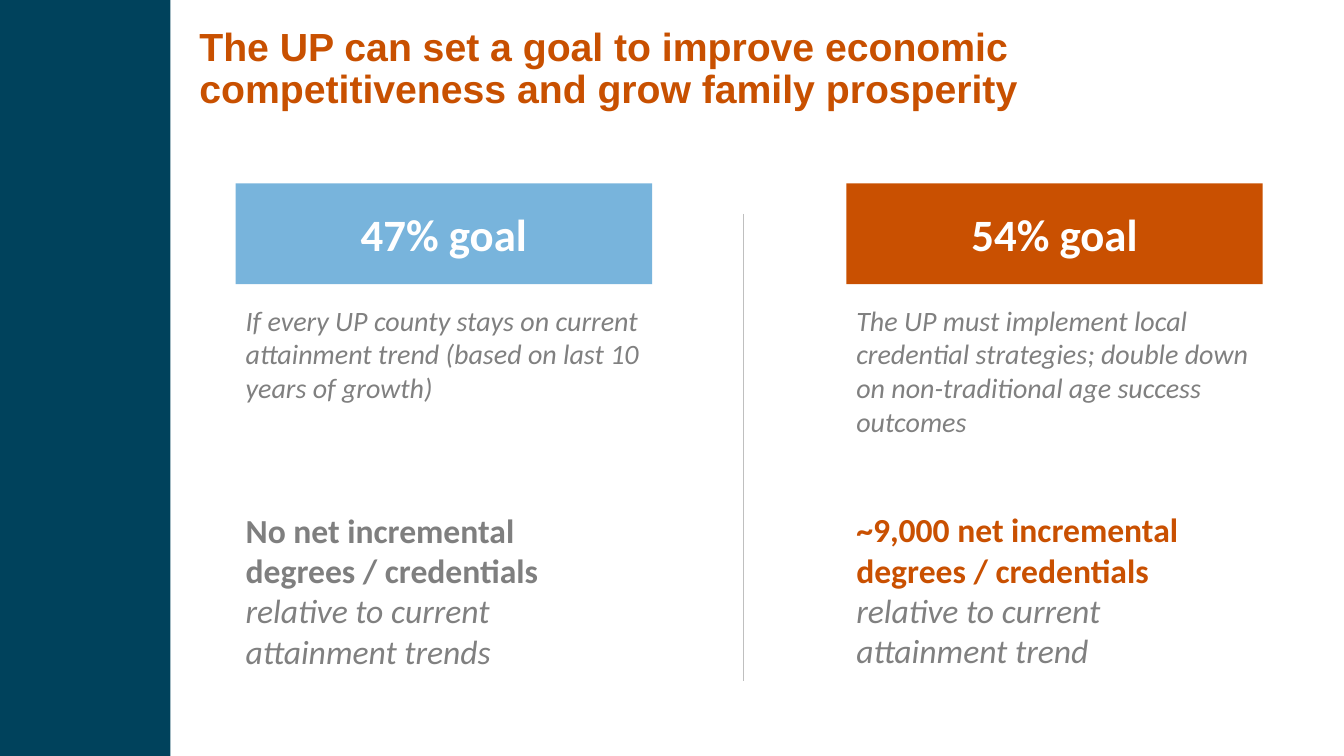
from dataclasses import dataclass

from lxml.etree import SubElement
from pptx import Presentation
from pptx.dml.color import RGBColor
from pptx.enum.shapes import MSO_CONNECTOR as Connector
from pptx.enum.shapes import MSO_SHAPE as Shape
from pptx.enum.text import MSO_ANCHOR as Anchor
from pptx.enum.text import PP_ALIGN as Align
from pptx.oxml.ns import qn
from pptx.slide import Slide
from pptx.util import Pt


@dataclass(frozen=True)
class Theme:
    navy: str = "00425C"
    orange: str = "C85000"
    header_orange: str = "C95001"
    blue: str = "78B4DC"
    grey: str = "808080"
    rule: str = "BFBFBF"
    white: str = "FFFFFF"
    title_font: str = "Arial"
    body_font: str = "Calibri"
    title_size: float = 28
    goal_size: float = 32
    result_size: float = 24
    note_size: float = 20


@dataclass(frozen=True)
class GoalColumn:
    left: float
    goal: str
    fill: str
    note: str
    note_lines: int
    result: str
    result_color: str
    comparison: str


THEME = Theme()
SLIDE_WIDTH, SLIDE_HEIGHT = 960, 540
COLUMN_WIDTH = 297.4
HEADER_TOP, HEADER_HEIGHT = 131, 72
BODY_TOP, BODY_HEIGHT = 213.1, 303.1
NOTE_ROWS, NOTE_LINE, RESULT_GAP = 4, 24.4, 39

COLUMNS = (
    GoalColumn(168.4, "47% goal", THEME.blue,
               "If every UP county stays on current attainment trend "
               "(based on last 10 years of growth)", 3,
               "No net incremental degrees / credentials", "7F7F7F",
               "relative to current attainment trends"),
    GoalColumn(604.6, "54% goal", THEME.header_orange,
               "The UP must implement local credential strategies; double down "
               "on non-traditional age success outcomes", 4,
               "~9,000 net incremental degrees / credentials", THEME.header_orange,
               "relative to current attainment trend"),
)


def add_span(para, text: str, size: float, color: str, font: str = THEME.body_font,
             bold: bool = False, italic: bool = False) -> None:
    span = para.add_run()
    span.text = text
    span.font.name = font
    span.font.size = Pt(size)
    span.font.bold = bold
    span.font.italic = italic
    span.font.color.rgb = RGBColor.from_string(color)


def add_block(page: Slide, left: float, top: float, width: float, height: float, fill: str):
    block = page.shapes.add_shape(Shape.RECTANGLE, Pt(left), Pt(top), Pt(width), Pt(height))
    block.shadow.inherit = False
    block.fill.solid()
    block.fill.fore_color.rgb = RGBColor.from_string(fill)
    block.line.fill.background()
    return block


def add_text_frame(page: Slide, left: float, top: float, width: float, height: float):
    box = page.shapes.add_textbox(Pt(left), Pt(top), Pt(width), Pt(height))
    box.text_frame.word_wrap = True
    return box.text_frame


def add_divider(page: Slide, x: float, top: float, bottom: float) -> None:
    divider = page.shapes.add_connector(Connector.STRAIGHT, Pt(x), Pt(top), Pt(x), Pt(bottom))
    divider.line.color.rgb = RGBColor.from_string(THEME.rule)
    divider.line.width = Pt(0.75)
    SubElement(divider._element.spPr, qn("a:effectLst"))


def add_title(page: Slide, text: str) -> None:
    frame = add_text_frame(page, 135.4, -2.2, 722.2, 104.4)
    frame.vertical_anchor = Anchor.MIDDLE
    para = frame.paragraphs[0]
    para.line_spacing = 0.9
    add_span(para, text, THEME.title_size, THEME.orange, THEME.title_font, bold=True)


def add_column(page: Slide, column: GoalColumn) -> None:
    # Goal header
    header = add_block(page, column.left, HEADER_TOP, COLUMN_WIDTH, HEADER_HEIGHT, column.fill)
    header.text_frame.word_wrap = True
    header.text_frame.vertical_anchor = Anchor.MIDDLE
    para = header.text_frame.paragraphs[0]
    para.alignment = Align.CENTER
    add_span(para, column.goal, THEME.goal_size, THEME.white, bold=True)

    # Condition for reaching the goal
    frame = add_text_frame(page, column.left, BODY_TOP, COLUMN_WIDTH, BODY_HEIGHT)
    para = frame.paragraphs[0]
    para.space_after = Pt(12)
    add_span(para, column.note, THEME.note_size, THEME.grey, italic=True)

    # Result, level across columns whatever the length of the note
    para = frame.add_paragraph()
    para.space_before = Pt(RESULT_GAP + (NOTE_ROWS - column.note_lines) * NOTE_LINE)
    para.space_after = Pt(12)
    add_span(para, column.result, THEME.result_size, column.result_color, bold=True)
    para.add_line_break()
    add_span(para, column.comparison, THEME.result_size, THEME.grey, italic=True)


def main() -> None:
    deck = Presentation()
    deck.slide_width, deck.slide_height = Pt(SLIDE_WIDTH), Pt(SLIDE_HEIGHT)
    page = deck.slides.add_slide(deck.slide_layouts[6])

    # Side band and centre rule
    add_block(page, 0, 0, 121.7, SLIDE_HEIGHT, THEME.navy)
    add_divider(page, 531.2, 152.8, 486.6)

    # Title and the two goals
    add_title(page, "The UP can set a goal to improve economic competitiveness "
                    "and grow family prosperity")
    for column in COLUMNS:
        add_column(page, column)

    deck.save("out.pptx")


if __name__ == "__main__":
    main()
